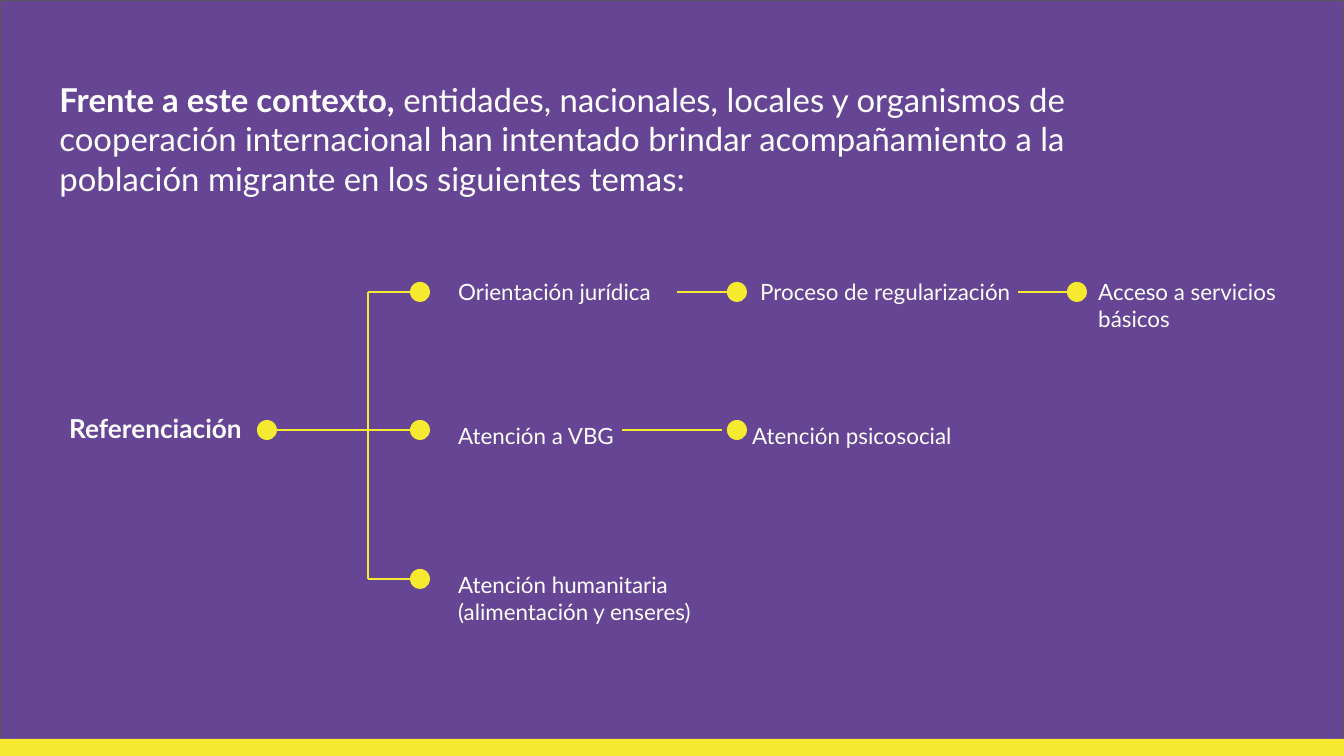
"""Builds the slide on support topics for the migrant population."""
from lxml import etree
from pptx import Presentation, util as u
from pptx.dml.color import RGBColor
from pptx.enum import shapes, text
from pptx.oxml.ns import qn

COLORS = {"purple": "664595", "yellow": "F5EA2F", "white": "FFFFFF", "grey": "595959"}
FONT = "Lato"
PX = 914400 / 134.4
WIDTH, HEIGHT = 1344, 756
DOT = 20
ROOT_X, TRUNK_X, BRANCH_X, SECOND_X, THIRD_X = 267, 368, 420, 737, 1077
LEGAL_Y, VIOLENCE_Y, AID_Y = 292, 430, 579

HEADLINE = [
    ("Frente a este contexto,", True),
    (" entidades, nacionales, locales y organismos de cooperación internacional han "
     "intentado brindar acompañamiento a la población migrante en los siguientes temas:", False),
]
ROOT = ("Referenciación", 56, 399, 241, 59)
TOPICS = [
    ("Orientación jurídica", 445, 265, 262, 54),
    ("Proceso de regularización", 747, 265, 355, 54),
    ("Acceso a servicios básicos", 1085, 265, 262, 82),
    ("Atención a VBG", 445, 409, 241, 54),
    ("Atención psicosocial", 739, 409, 293, 54),
    ("Atención humanitaria (alimentación y enseres)", 445, 558, 316, 82),
]
DOTS = [
    (ROOT_X, VIOLENCE_Y),
    (BRANCH_X, LEGAL_Y), (BRANCH_X, VIOLENCE_Y), (BRANCH_X, AID_Y),
    (SECOND_X, LEGAL_Y), (SECOND_X, VIOLENCE_Y), (THIRD_X, LEGAL_Y),
]
LINES = [
    (ROOT_X + DOT // 2, VIOLENCE_Y, BRANCH_X, VIOLENCE_Y),
    (TRUNK_X, LEGAL_Y, TRUNK_X, AID_Y),
    (TRUNK_X, LEGAL_Y, BRANCH_X, LEGAL_Y),
    (TRUNK_X, AID_Y, BRANCH_X, AID_Y),
    (677, LEGAL_Y, SECOND_X - DOT // 2, LEGAL_Y),
    (1018, LEGAL_Y, THIRD_X - DOT // 2, LEGAL_Y),
    (622, VIOLENCE_Y, 722, VIOLENCE_Y),
]


def px(*lengths):
    return [u.Emu(round(length * PX)) for length in lengths]


def color(name):
    return RGBColor.from_string(COLORS[name])


def write(holder, pieces, size):
    frame = holder.text_frame
    frame.word_wrap = True
    frame.auto_size = text.MSO_AUTO_SIZE.NONE
    frame.vertical_anchor = text.MSO_ANCHOR.TOP
    frame.margin_left = frame.margin_right = u.Inches(0.1)
    frame.margin_top = frame.margin_bottom = u.Inches(0.1)
    paragraph = frame.paragraphs[0]
    paragraph.alignment = text.PP_ALIGN.LEFT
    for words, bold in pieces:
        run = paragraph.add_run()
        run.text = words
        run.font.name, run.font.size, run.font.bold = FONT, u.Pt(size), bold
        run.font.color.rgb = color("white")


def add_solid(slide, kind, box, fill, line=None):
    solid = slide.shapes.add_shape(kind, *px(*box))
    solid.shadow.inherit = False
    solid.fill.solid()
    solid.fill.fore_color.rgb = color(fill)
    if line:
        solid.line.color.rgb = color(line)
        solid.line.width = u.Pt(0.75)
    else:
        solid.line.fill.background()
    return solid


def add_line(slide, ends):
    line = slide.shapes.add_connector(shapes.MSO_CONNECTOR.STRAIGHT, *px(*ends))
    line.line.color.rgb = color("yellow")
    line.line.width = u.Pt(0.75)
    etree.SubElement(line.element.spPr, qn("a:effectLst"))


def add_label(slide, label, size, bold=False):
    words, *box = label
    write(slide.shapes.add_textbox(*px(*box)), [(words, bold)], size)


def main():
    deck = Presentation()
    deck.slide_width, deck.slide_height = px(WIDTH, HEIGHT)
    slide = deck.slides.add_slide(deck.slide_layouts[5])
    rectangle, oval = shapes.MSO_SHAPE.RECTANGLE, shapes.MSO_SHAPE.OVAL

    title = slide.shapes.title
    title.left, title.top, title.width, title.height = px(46, 66, 1160, 85)
    write(title, HEADLINE, 17.6)
    backdrop = add_solid(slide, rectangle, (0, 0, WIDTH, 769), "purple", "grey")
    title.element.addprevious(backdrop.element)

    add_label(slide, ROOT, 14, bold=True)
    for topic in TOPICS:
        add_label(slide, topic, 12)
    for ends in LINES:
        add_line(slide, ends)
    for x, y in DOTS:
        add_solid(slide, oval, (x - DOT / 2, y - DOT / 2, DOT, DOT), "yellow")
    add_solid(slide, rectangle, (-3, 739, WIDTH + 6, 30), "yellow")
    deck.save("out.pptx")


if __name__ == "__main__":
    main()
